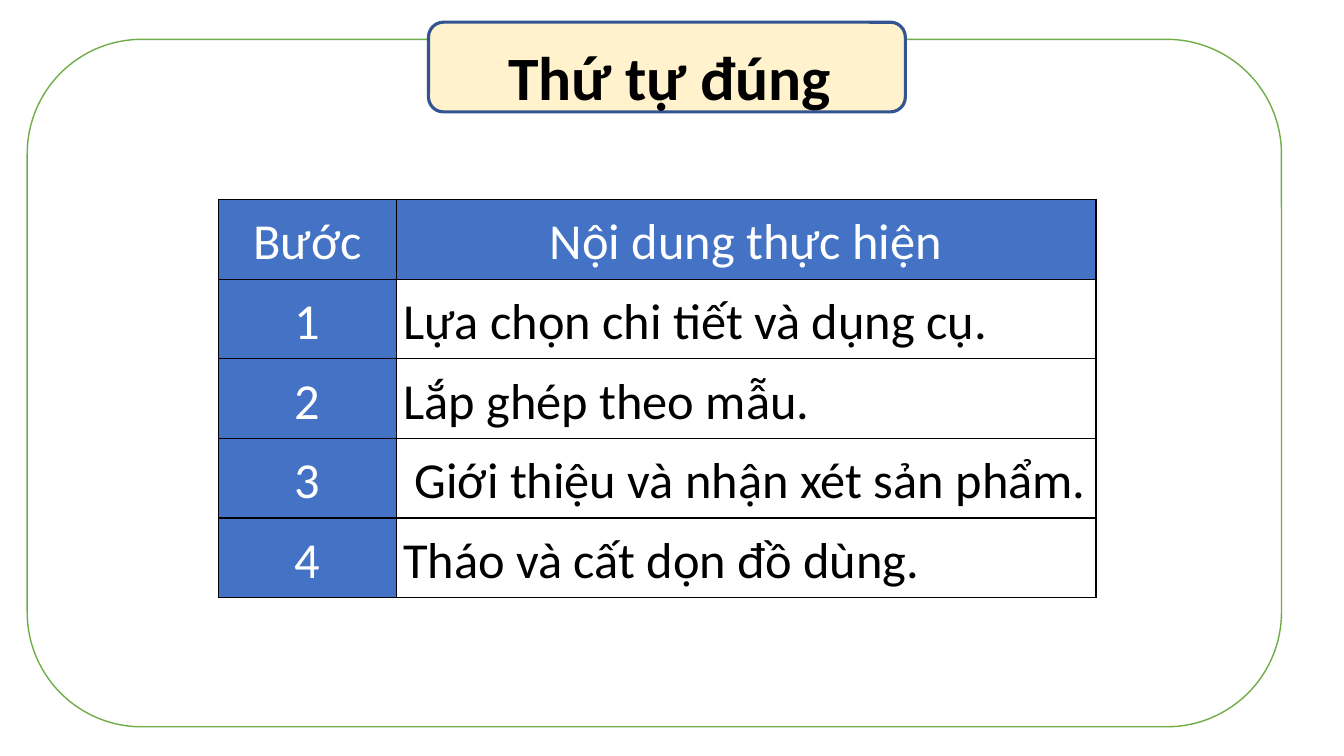
from dataclasses import dataclass

from lxml.etree import SubElement
from pptx import Presentation
from pptx.dml.color import RGBColor
from pptx.enum.shapes import MSO_SHAPE as Shape
from pptx.enum.text import MSO_ANCHOR as Anchor, MSO_AUTO_SIZE as AutoSize, PP_ALIGN as Align
from pptx.oxml.ns import qn
from pptx.util import Pt

EMU_PER_PX = 9144


@dataclass(frozen=True)
class Theme:
    font: str = "Calibri"
    title_size: int = 44
    table_size: int = 36
    black: str = "000000"
    white: str = "FFFFFF"
    green: str = "70AD47"
    cream: str = "FFF2CC"
    navy: str = "325491"
    blue: str = "4472C4"


def px(length):
    return length * EMU_PER_PX


def color(code):
    return RGBColor.from_string(code)


def write(frame, text, *, font, size, ink, bold=False, align=Align.CENTER, spacing=1.0):
    para = frame.paragraphs[0]
    para.alignment = align
    para.line_spacing = spacing
    span = para.add_run()
    span.text = text
    span.font.name = font
    span.font.size = Pt(size)
    span.font.bold = bold
    span.font.color.rgb = color(ink)


class SlideBuilder:
    def __init__(self, slide, theme):
        self.slide = slide
        self.theme = theme

    def rounded_box(self, left, top, width, height, *, fill, line, weight):
        box = self.slide.shapes.add_shape(
            Shape.ROUNDED_RECTANGLE, px(left), px(top), px(width), px(height)
        )
        box.shadow.inherit = False
        box.fill.solid()
        box.fill.fore_color.rgb = color(fill)
        box.line.color.rgb = color(line)
        box.line.width = Pt(weight)

    def title(self, text, left, top, width, height):
        title = self.slide.shapes.title
        self.slide.shapes.element.append(title.element)
        title.left, title.top = px(left), px(top)
        title.width, title.height = px(width), px(height)
        frame = title.text_frame
        frame.word_wrap = True
        frame.auto_size = AutoSize.SHAPE_TO_FIT_TEXT
        frame.vertical_anchor = Anchor.TOP
        write(frame, text, font=self.theme.font, size=self.theme.title_size,
              ink=self.theme.black, bold=True, spacing=1.15)

    def table(self, rows, left, top, widths, row_height):
        table = self.slide.shapes.add_table(
            len(rows), len(widths), px(left), px(top),
            px(sum(widths)), px(row_height * len(rows))
        ).table
        table.horz_banding = False
        for column, width in zip(table.columns, widths):
            column.width = px(width)
        for row_index, texts in enumerate(rows):
            table.rows[row_index].height = px(row_height)
            for column_index, text in enumerate(texts):
                heading = row_index == 0 or column_index == 0
                self.cell(table.cell(row_index, column_index), text, heading)

    def cell(self, cell, text, heading):
        theme = self.theme
        cell.margin_left = cell.margin_right = px(7)
        cell.margin_top = cell.margin_bottom = 0
        cell.vertical_anchor = Anchor.TOP
        self.borders(cell)
        cell.fill.solid()
        cell.fill.fore_color.rgb = color(theme.blue if heading else theme.white)
        write(cell.text_frame, text, font=theme.font, size=theme.table_size,
              ink=theme.white if heading else theme.black,
              align=Align.CENTER if heading else Align.JUSTIFY, spacing=1.2)

    def borders(self, cell):
        properties = cell._tc.get_or_add_tcPr()
        for side in ("a:lnL", "a:lnR", "a:lnT", "a:lnB"):
            line = SubElement(properties, qn(side), w=str(Pt(1)))
            fill = SubElement(line, qn("a:solidFill"))
            SubElement(fill, qn("a:srgbClr"), val=self.theme.black)


def main():
    deck = Presentation()
    deck.slide_width, deck.slide_height = px(1333), px(750)
    theme = Theme()
    title_only = deck.slide_layouts[5]
    page = SlideBuilder(deck.slides.add_slide(title_only), theme)

    page.rounded_box(27, 39, 1244, 682, fill=theme.white, line=theme.green, weight=1)
    page.rounded_box(425, 22, 473, 89, fill=theme.cream, line=theme.navy, weight=2.25)
    page.title("Thứ tự đúng", 442, 23, 445, 66)
    steps = [
        ("Bước", "Nội dung thực hiện"),
        ("1", "Lựa chọn chi tiết và dụng cụ."),
        ("2", "Lắp ghép theo mẫu."),
        ("3", " Giới thiệu và nhận xét sản phẩm."),
        ("4", "Tháo và cất dọn đồ dùng."),
    ]
    page.table(steps, 217, 198, widths=(176, 694), row_height=79)
    deck.save("out.pptx")


if __name__ == "__main__":
    main()
